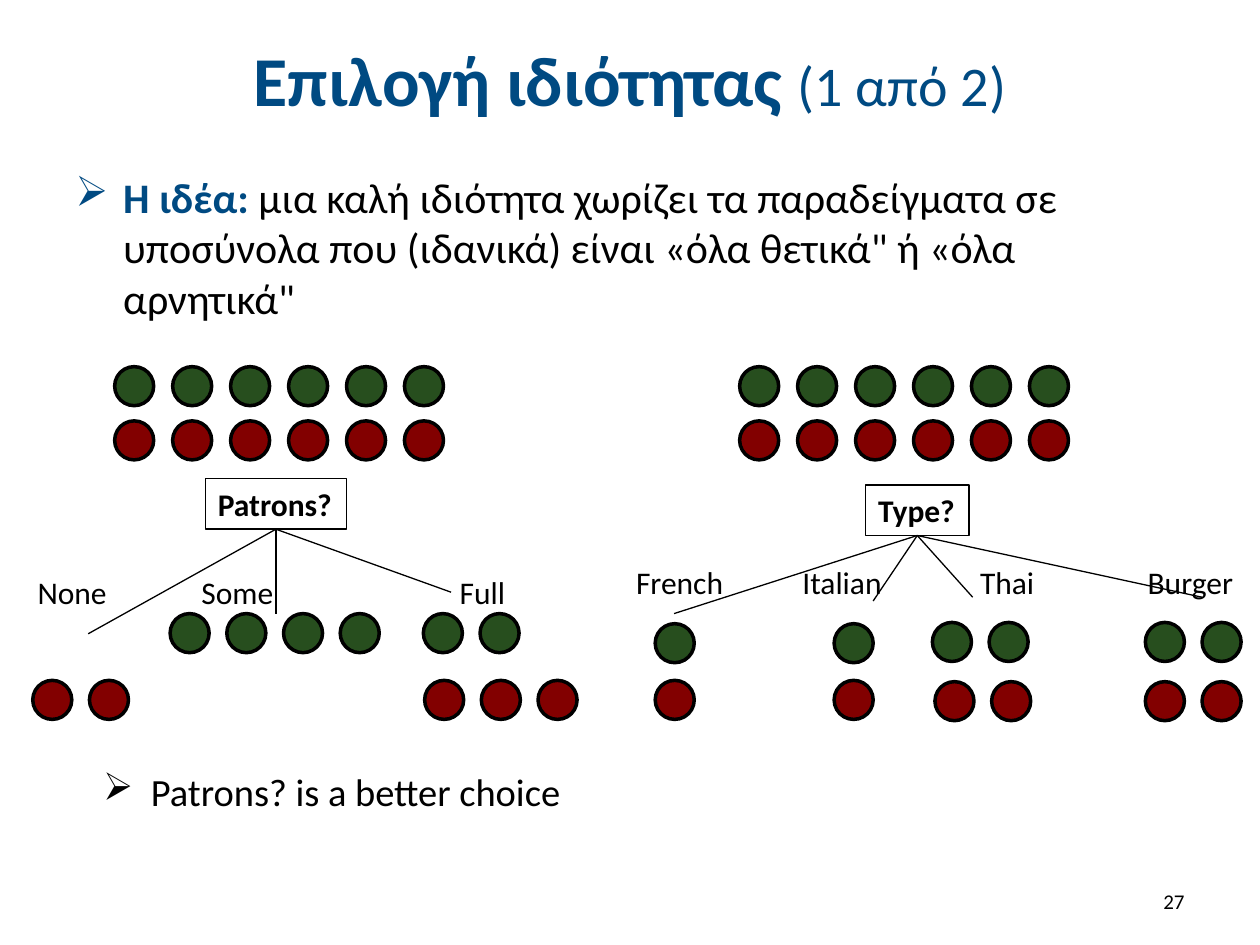
from dataclasses import dataclass

from lxml import etree
from pptx import Presentation
from pptx import util as u
from pptx.dml.color import RGBColor
from pptx.enum import shapes, text
from pptx.oxml import ns


@dataclass(frozen=True)
class Theme:
    font: str = "Calibri"
    accent: RGBColor = RGBColor(0x00, 0x4A, 0x82)
    ink: RGBColor = RGBColor(0, 0, 0)
    positive: RGBColor = RGBColor(0x27, 0x4E, 0x1E)
    negative: RGBColor = RGBColor(0x82, 0, 0)
    title: int = 40
    counter: int = 32
    body: int = 24
    remark: int = 22
    label: int = 18
    number: int = 12
    outline: float = 2
    branch: float = 0.75


THEME = Theme()
COLUMNS, ROWS = 100, 75
DOT = 3.1
PITCH = 4.5
WIDE_PITCH = 4.6


def cells(*counts):
    return [u.Inches(count / 10) for count in counts]


def style(run, size, color=THEME.ink, bold=False):
    run.font.name = THEME.font
    run.font.size = u.Pt(size)
    run.font.color.rgb = color
    run.font.bold = bold


def add_text(slide, place, pieces, align=text.PP_ALIGN.LEFT,
             anchor=text.MSO_ANCHOR.TOP, wrap=True, bullet=False):
    box = slide.shapes.add_textbox(*cells(*place))
    frame = box.text_frame
    frame.word_wrap = wrap
    frame.auto_size = text.MSO_AUTO_SIZE.NONE if wrap else text.MSO_AUTO_SIZE.SHAPE_TO_FIT_TEXT
    frame.vertical_anchor = anchor
    line = frame.paragraphs[0]
    line.alignment = align
    if bullet:
        add_bullet(line)
    for wording, *look in pieces:
        run = line.add_run()
        run.text = wording
        style(run, *look)


def add_bullet(line):
    indent = u.Inches(0.38)
    properties = line._p.get_or_add_pPr()
    properties.set("marL", str(indent))
    properties.set("indent", str(-indent))
    etree.SubElement(properties, ns.qn("a:buChar")).set("char", "➢")


def add_question(slide, wording, place):
    question = slide.shapes.add_shape(shapes.MSO_SHAPE.RECTANGLE, *cells(*place))
    question.shadow.inherit = False
    question.fill.background()
    question.line.color.rgb = THEME.ink
    question.line.width = u.Pt(THEME.branch)
    frame = question.text_frame
    frame.word_wrap = False
    frame.text = wording
    style(frame.paragraphs[0].runs[0], THEME.label, bold=True)
    return question


def add_examples(slide, *lines, pitch=PITCH):
    group = slide.shapes.add_group_shape()
    for color, column, row, count in lines:
        for index in range(count):
            example = group.shapes.add_shape(
                shapes.MSO_SHAPE.OVAL, *cells(column + index * pitch, row, DOT, DOT))
            example.shadow.inherit = False
            example.fill.solid()
            example.fill.fore_color.rgb = color
            example.line.color.rgb = THEME.ink
            example.line.width = u.Pt(THEME.outline)


def add_branch(slide, question, column, row):
    branch = slide.shapes.add_connector(
        shapes.MSO_CONNECTOR.STRAIGHT, 0, 0, *cells(column, row))
    branch.begin_connect(question, 2)
    branch.line.color.rgb = THEME.ink
    branch.line.width = u.Pt(THEME.branch)
    etree.SubElement(branch._element.spPr, ns.qn("a:effectLst"))


def add_split(slide, wording, place, start, label_row, answers):
    add_examples(slide, (THEME.positive, start, 29.1, 6),
                 (THEME.negative, start, 33.4, 6), pitch=WIDE_PITCH)
    question = add_question(slide, wording, place)
    for answer, column, width, tip, lines in answers:
        add_branch(slide, question, *tip)
        add_examples(slide, *lines)
        add_text(slide, (column, label_row, width, 4),
                 [(answer, THEME.label)], wrap=False)


def main():
    deck = Presentation()
    deck.slide_width, deck.slide_height = cells(COLUMNS, ROWS)
    slide = deck.slides.add_slide(deck.slide_layouts[6])
    yes, no = THEME.positive, THEME.negative
    middle = text.MSO_ANCHOR.MIDDLE

    add_text(slide, (0, 1.3, COLUMNS, 9.9),
             [("Επιλογή ιδιότητας ", THEME.title, THEME.accent, True),
              ("(1 από 2)", THEME.counter, THEME.accent)],
             text.PP_ALIGN.CENTER, middle)
    add_text(slide, (5, 13.1, 90, 15),
             [("Η ιδέα: ", THEME.body, THEME.accent, True),
              ("μια καλή ιδιότητα χωρίζει τα παραδείγματα σε υποσύνολα που "
               "(ιδανικά) είναι «όλα θετικά\" ή «όλα αρνητικά\"", THEME.body)],
             bullet=True)

    add_split(slide, "Patrons?", (16.3, 38, 11.2, 4), 9.1, 45, [
        ("None", 2, 7.6, (7, 50.3), [(no, 2.6, 54, 2)]),
        ("Some", 15, 7.8, (21.9, 48.7), [(yes, 13.5, 48.7, 4)]),
        ("Full", 35.5, 5.7, (35.8, 47), [(yes, 33.6, 48.7, 2), (no, 33.7, 54, 3)]),
    ])
    add_split(slide, "Type?", (68.7, 38.5, 8.2, 4), 58.7, 44.2, [
        ("French", 49.5, 9, (53.5, 48.7), [(yes, 52, 49.5, 1), (no, 52, 54, 1)]),
        ("Italian", 62.7, 8.4, (69.3, 47.7), [(yes, 66.2, 49.5, 1), (no, 66.2, 54, 1)]),
        ("Thai", 76.8, 6.4, (77.2, 47.4), [(yes, 74, 49.4, 2), (no, 74.2, 54.1, 2)]),
        ("Burger", 90.1, 8.9, (95.4, 47.4), [(yes, 90.9, 49.4, 2), (no, 90.9, 54.1, 2)]),
    ])

    add_text(slide, (7.2, 60.5, 38.7, 4.7),
             [("Patrons? is a better choice", THEME.remark)], wrap=False, bullet=True)
    add_text(slide, (71.7, 69.5, 23.3, 4), [("27", THEME.number)],
             text.PP_ALIGN.RIGHT, middle)
    deck.save("out.pptx")


if __name__ == "__main__":
    main()
